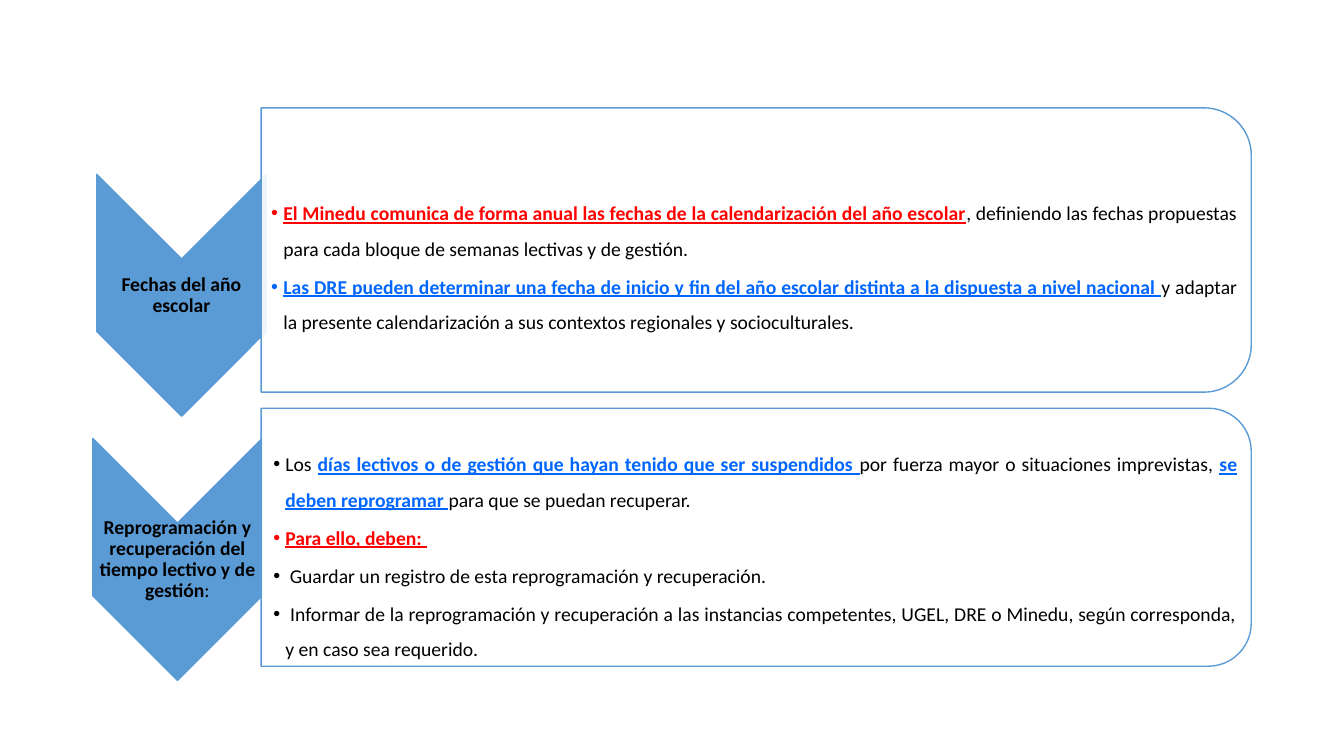
from lxml.etree import SubElement
from pptx import Presentation
from pptx.dml.color import RGBColor
from pptx.enum.shapes import MSO_SHAPE
from pptx.enum.text import MSO_ANCHOR, MSO_AUTO_SIZE, PP_ALIGN
from pptx.oxml.ns import qn
from pptx.util import Inches, Pt

BLUE = RGBColor(0x5B, 0x9B, 0xD5)
LINK_BLUE = RGBColor(0x00, 0x66, 0xFF)
RED = RGBColor(0xFF, 0x00, 0x00)
BLACK = RGBColor(0x00, 0x00, 0x00)
WHITE = RGBColor(0xFF, 0xFF, 0xFF)

SLIDE_WIDTH, SLIDE_HEIGHT = 13.33, 7.5
CHEVRON_WIDTH, CHEVRON_HEIGHT = 1.68, 2.4
PANEL_LEFT, PANEL_WIDTH = 2.59, 9.82
TEXT_WIDTH = 9.69
TEXT_MARGIN = 0.13
BULLET_INDENT = 0.12

# Each span is (text, colour, highlighted); highlighted spans are bold and underlined
DATES = [
    [("El Minedu comunica de forma anual las fechas de la calendarización del año escolar", RED, True),
     (", definiendo las fechas propuestas para cada bloque de semanas lectivas y de gestión. ", BLACK, False)],
    [("Las DRE pueden determinar una fecha de inicio y fin del año escolar distinta "
      "a la dispuesta a nivel nacional ", LINK_BLUE, True),
     ("y adaptar la presente calendarización a sus contextos regionales y socioculturales. ", BLACK, False)],
]
RESCHEDULING = [
    [("Los ", BLACK, False),
     ("días lectivos o de gestión que hayan tenido que ser suspendidos ", LINK_BLUE, True),
     ("por fuerza mayor o situaciones imprevistas, ", BLACK, False),
     ("se deben reprogramar ", LINK_BLUE, True),
     ("para que se puedan recuperar.", BLACK, False)],
    [("Para ello, deben: ", RED, True)],
    [(" Guardar un registro de esta reprogramación y recuperación.", BLACK, False)],
    [(" Informar de la reprogramación y recuperación a las instancias competentes, "
      "UGEL, DRE o Minedu, según corresponda, y en caso sea requerido.", BLACK, False)],
]


def add_turned_shape(page, kind, box, fill):
    """Place a shape turned by 90 degrees so that it covers the given box."""
    left, top, width, height = box
    shift = (width - height) / 2
    shape = page.shapes.add_shape(kind, Inches(left + shift), Inches(top - shift),
                                  Inches(height), Inches(width))
    shape.rotation = 90
    shape.shadow.inherit = False
    shape.fill.solid()
    shape.fill.fore_color.rgb = fill
    shape.line.color.rgb = BLUE
    shape.line.width = Pt(1)
    return shape


def set_frame(frame, anchor, left=0.01, top=0.01):
    frame.word_wrap = True
    frame.auto_size = MSO_AUTO_SIZE.NONE
    frame.vertical_anchor = anchor
    frame.margin_left, frame.margin_top = Inches(left), Inches(top)
    frame.margin_right = frame.margin_bottom = Inches(0.01)


def set_font(para):
    para.font.name = "Calibri"
    para.font.size = Pt(14)


def add_chevron(page, box, label):
    """Blue chevron with its centred label."""
    add_turned_shape(page, MSO_SHAPE.CHEVRON, box, BLUE)
    left, top, width, height = box
    label_box = page.shapes.add_textbox(Inches(left), Inches(top + height * 0.35),
                                        Inches(width), Inches(height * 0.3))
    set_frame(label_box.text_frame, MSO_ANCHOR.MIDDLE)
    para = label_box.text_frame.paragraphs[0]
    para.alignment = PP_ALIGN.CENTER
    para.line_spacing = 0.9
    set_font(para)
    for text, bold in label:
        span = para.add_run()
        span.text = text
        span.font.bold = bold
        span.font.color.rgb = BLACK


def add_bullet(para):
    properties = para._p.get_or_add_pPr()
    properties.set("marL", str(Inches(BULLET_INDENT)))
    properties.set("indent", str(-Inches(BULLET_INDENT)))
    SubElement(properties, qn("a:buChar"), char="•")


def add_panel(page, box, holder, items, inset_left, inset_top):
    """Outlined panel with rounded right corners and a bulleted list."""
    panel = add_turned_shape(page, MSO_SHAPE.ROUND_2_SAME_RECTANGLE, box, WHITE)
    colour = panel.fill._xPr.find(qn("a:solidFill"))[0]
    SubElement(colour, qn("a:alpha"), val="90000")

    left, top, width, height = box
    holder.left, holder.top = Inches(left), Inches(top + TEXT_MARGIN)
    holder.width, holder.height = Inches(TEXT_WIDTH), Inches(height - 2 * TEXT_MARGIN)
    page.shapes._spTree.append(holder._element)  # bring the list in front of its panel
    frame = holder.text_frame
    set_frame(frame, MSO_ANCHOR.TOP, inset_left, inset_top)
    for number, spans in enumerate(items):
        para = frame.add_paragraph() if number else frame.paragraphs[0]
        para.alignment = PP_ALIGN.JUSTIFY
        para.line_spacing = 1.5
        para.space_before, para.space_after = Pt(0), Pt(2)
        add_bullet(para)
        set_font(para)
        for text, colour, highlighted in spans:
            span = para.add_run()
            span.text = text
            span.font.bold = span.font.underline = highlighted
            span.font.color.rgb = colour


def main():
    deck = Presentation()
    deck.slide_width, deck.slide_height = Inches(SLIDE_WIDTH), Inches(SLIDE_HEIGHT)
    page = deck.slides.add_slide(deck.slide_layouts[3])
    title = page.shapes.title._element
    title.getparent().remove(title)
    first_list, second_list = list(page.placeholders)

    # School year dates
    add_chevron(page, (0.96, 1.73, CHEVRON_WIDTH, CHEVRON_HEIGHT),
                [("Fechas del año escolar", True)])
    add_panel(page, (PANEL_LEFT, 1.07, PANEL_WIDTH, 2.82), first_list, DATES, 0.1, 0.68)

    # Rescheduling of lost days
    add_chevron(page, (0.92, 4.35, CHEVRON_WIDTH, CHEVRON_HEIGHT),
                [("Reprogramación y recuperación del tiempo lectivo y de gestión", True), (":", False)])
    add_panel(page, (PANEL_LEFT, 4.05, PANEL_WIDTH, 2.56), second_list, RESCHEDULING, 0.12, 0.19)

    deck.save("out.pptx")


if __name__ == "__main__":
    main()
